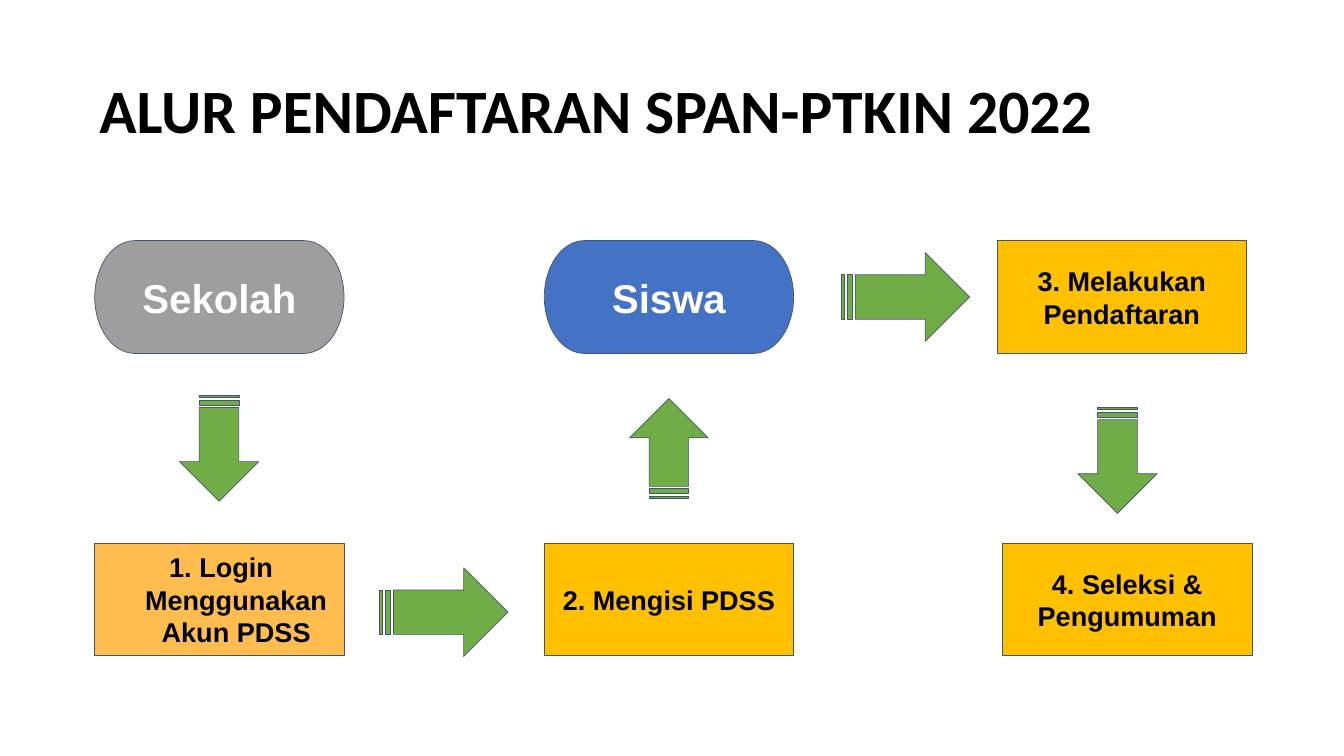
from lxml import etree
from pptx import Presentation
from pptx.dml.color import RGBColor
from pptx.enum.shapes import MSO_SHAPE
from pptx.enum.text import MSO_ANCHOR, PP_ALIGN
from pptx.oxml.ns import qn
from pptx.util import Inches, Pt

BLACK, WHITE = "000000", "FFFFFF"
GREY, BLUE, GREEN = "9E9E9E", "4472C4", "70AD47"
AMBER, LIGHT_AMBER, OUTLINE = "FFC000", "FFBD4F", "44546A"

NODE_W, NODE_H = 3.71, 1.68
COLUMN_1, COLUMN_2 = 1.41, 8.1
TOP_ROW, BOTTOM_ROW = 3.58, 8.08


def color(hex_code):
    return RGBColor.from_string(hex_code)


def style_font(paragraph, name, size, hex_code):
    font = paragraph.font
    font.name, font.size, font.bold = name, Pt(size), True
    font.color.rgb = color(hex_code)


def add_filled_shape(slide, kind, box, fill):
    shape = slide.shapes.add_shape(kind, *(Inches(v) for v in box))
    shape.shadow.inherit = False
    shape.fill.solid()
    shape.fill.fore_color.rgb = color(fill)
    shape.line.color.rgb = color(OUTLINE)
    shape.line.width = Pt(0.75)
    return shape


def number_paragraph(paragraph):
    """Give the paragraph an automatic black "1." with a hanging indent."""
    properties = paragraph._p.get_or_add_pPr()
    properties.set("marL", str(Inches(0.5)))
    properties.set("indent", str(Inches(-0.45)))
    bullet_color = etree.SubElement(properties, qn("a:buClr"))
    etree.SubElement(bullet_color, qn("a:srgbClr"), val=BLACK)
    etree.SubElement(properties, qn("a:buFont"), typeface="Arial")
    etree.SubElement(properties, qn("a:buAutoNum"), type="arabicPeriod")


def add_node(slide, kind, left, top, text, fill, size, text_color, numbered=False):
    node = add_filled_shape(slide, kind, (left, top, NODE_W, NODE_H), fill)
    frame = node.text_frame
    frame.word_wrap = True
    frame.vertical_anchor = MSO_ANCHOR.MIDDLE
    frame.margin_left = frame.margin_right = Inches(0.1)
    frame.margin_top = frame.margin_bottom = Inches(0.1)
    paragraph = frame.paragraphs[0]
    paragraph.text = text
    paragraph.alignment = PP_ALIGN.CENTER
    if numbered:
        number_paragraph(paragraph)
    style_font(paragraph, "Arial", size, text_color)


def add_actor(slide, left, top, text, fill):
    add_node(slide, MSO_SHAPE.FLOWCHART_TERMINATOR, left, top, text, fill, 43, WHITE)


def add_step(slide, left, top, text, fill=AMBER, numbered=False):
    add_node(slide, MSO_SHAPE.RECTANGLE, left, top, text, fill, 29, BLACK, numbered)


def add_arrow(slide, box, rotation=0):
    arrow = add_filled_shape(slide, MSO_SHAPE.STRIPED_RIGHT_ARROW, box, GREEN)
    arrow.rotation = rotation


def add_title(slide, box, text):
    title = slide.shapes.add_textbox(*(Inches(v) for v in box))
    frame = title.text_frame
    frame.word_wrap = True
    frame.vertical_anchor = MSO_ANCHOR.MIDDLE
    paragraph = frame.paragraphs[0]
    paragraph.text = text
    paragraph.line_spacing = 0.9
    style_font(paragraph, "Calibri", 66, BLACK)


def main():
    presentation = Presentation()
    presentation.slide_width = Inches(20)
    presentation.slide_height = Inches(11.25)
    slide = presentation.slides.add_slide(presentation.slide_layouts[6])

    add_title(slide, (1.38, 0.6, 17.25, 2.17), "ALUR PENDAFTARAN SPAN-PTKIN 2022")

    # Who acts
    add_actor(slide, COLUMN_1, TOP_ROW, "Sekolah", GREY)
    add_actor(slide, COLUMN_2, TOP_ROW, "Siswa", BLUE)

    # What they do
    add_step(slide, COLUMN_1, BOTTOM_ROW, "Login Menggunakan Akun PDSS",
             LIGHT_AMBER, numbered=True)
    add_step(slide, COLUMN_2, BOTTOM_ROW, "2. Mengisi PDSS")
    add_step(slide, 14.84, TOP_ROW, "3. Melakukan Pendaftaran")
    add_step(slide, 14.92, BOTTOM_ROW, "4. Seleksi & Pengumuman")

    # Arrows in the order of the flow
    add_arrow(slide, (2.47, 6.08, 1.58, 1.18), 90)
    add_arrow(slide, (5.65, 8.45, 1.91, 1.32))
    add_arrow(slide, (9.21, 6.09, 1.49, 1.17), 270)
    add_arrow(slide, (12.52, 3.76, 1.91, 1.32))
    add_arrow(slide, (15.84, 6.26, 1.58, 1.18), 90)

    presentation.save("out.pptx")


if __name__ == "__main__":
    main()
